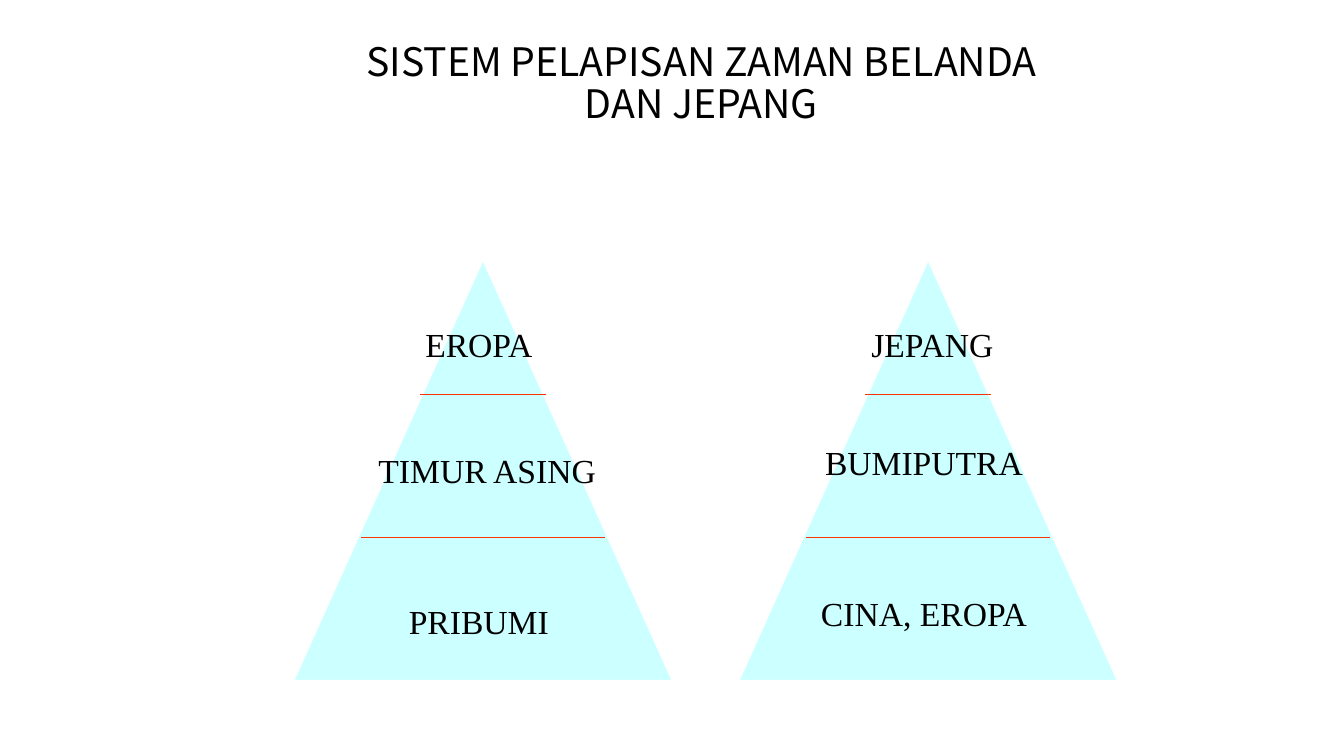
from dataclasses import dataclass

import pptx
import pptx.dml.color
import pptx.enum.shapes
import pptx.enum.text
import pptx.oxml
import pptx.oxml.ns
import pptx.util

Pt = pptx.util.Pt
RGB = pptx.dml.color.RGBColor
CENTER = pptx.enum.text.PP_ALIGN.CENTER


@dataclass(frozen=True)
class Theme:
    text: RGB = RGB(0x00, 0x00, 0x00)
    background: RGB = RGB(0xFF, 0xFF, 0xFF)
    pyramid: RGB = RGB(0xCC, 0xFF, 0xFF)
    divider: RGB = RGB(0xFF, 0x33, 0x00)
    title_font: str = "Noto Sans CJK KR"
    label_font: str = "Times New Roman"
    title_size: float = 28
    label_size: float = 24
    line_width: float = 0.75


@dataclass(frozen=True)
class Label:
    """A layer name, placed relative to the pyramid's top left corner."""
    text: str
    dx: float
    dy: float


@dataclass(frozen=True)
class Pyramid:
    left: float
    labels: tuple[Label, ...]


@dataclass(frozen=True)
class Divider:
    """A level line, centred on the pyramid."""
    dy: float
    width: float


THEME = Theme()
PYRAMID_TOP, PYRAMID_WIDTH, PYRAMID_HEIGHT = 186, 270, 300
LABEL_WIDTH, LABEL_HEIGHT = 192, 36
DIVIDERS = (Divider(96, 90), Divider(198, 174))
PYRAMIDS = (
    Pyramid(210, (Label("EROPA", 36, 42), Label("TIMUR ASING", 42, 132),
                  Label("PRIBUMI", 36, 240))),
    Pyramid(528, (Label("JEPANG", 42, 42), Label("BUMIPUTRA", 36, 126),
                  Label("CINA, EROPA", 36, 234))),
)


def write(tf: pptx.text.text.TextFrame, text: str, font: str, size: float) -> None:
    tf.word_wrap = True
    p = tf.paragraphs[0]
    p.alignment = CENTER
    p.space_before = Pt(0)
    r = p.add_run()
    r.text = text
    r.font.name = font
    r.font.size = Pt(size)
    r.font.color.rgb = THEME.text


def add_title(s: pptx.slide.Slide, text: str) -> None:
    sp = s.shapes.title
    sp.left, sp.top, sp.width, sp.height = Pt(252), Pt(24), Pt(498), Pt(73.5)
    tf = sp.text_frame
    tf.vertical_anchor = pptx.enum.text.MSO_ANCHOR.MIDDLE
    write(tf, text, THEME.title_font, THEME.title_size)
    tf.paragraphs[0].line_spacing = 0.9


def add_divider(shapes: pptx.shapes.shapetree.GroupShapes, left: float,
                divider: Divider) -> None:
    x = left + (PYRAMID_WIDTH - divider.width) / 2
    y = PYRAMID_TOP + divider.dy
    line = shapes.add_connector(pptx.enum.shapes.MSO_CONNECTOR.STRAIGHT,
                                Pt(x), Pt(y), Pt(x + divider.width), Pt(y))
    line.line.color.rgb = THEME.divider
    line.line.width = Pt(THEME.line_width)
    effects = pptx.oxml.parse_xml(f"<a:effectLst {pptx.oxml.ns.nsdecls('a')}/>")
    line._element.spPr.append(effects)


def add_label(shapes: pptx.shapes.shapetree.GroupShapes, left: float,
              label: Label) -> None:
    sp = shapes.add_textbox(Pt(left + label.dx), Pt(PYRAMID_TOP + label.dy),
                            Pt(LABEL_WIDTH), Pt(LABEL_HEIGHT))
    write(sp.text_frame, label.text, THEME.label_font, THEME.label_size)
    sp.text_frame.auto_size = pptx.enum.text.MSO_AUTO_SIZE.SHAPE_TO_FIT_TEXT


def add_pyramid(s: pptx.slide.Slide, pyramid: Pyramid) -> None:
    shapes = s.shapes.add_group_shape().shapes
    sp = shapes.add_shape(pptx.enum.shapes.MSO_SHAPE.ISOSCELES_TRIANGLE,
                          Pt(pyramid.left), Pt(PYRAMID_TOP),
                          Pt(PYRAMID_WIDTH), Pt(PYRAMID_HEIGHT))
    sp.shadow.inherit = False
    sp.fill.solid()
    sp.fill.fore_color.rgb = THEME.pyramid
    sp.line.color.rgb = THEME.background
    sp.line.width = Pt(THEME.line_width)
    for divider in DIVIDERS:
        add_divider(shapes, pyramid.left, divider)
    for label in pyramid.labels:
        add_label(shapes, pyramid.left, label)


def main() -> None:
    prs = pptx.Presentation()
    prs.slide_width, prs.slide_height = Pt(960), Pt(540)
    s = prs.slides.add_slide(prs.slide_layouts.get_by_name("Title Only"))
    s.background.fill.solid()
    s.background.fill.fore_color.rgb = THEME.background
    add_title(s, "SISTEM PELAPISAN ZAMAN BELANDA DAN JEPANG")
    for pyramid in PYRAMIDS:
        add_pyramid(s, pyramid)
    prs.save("out.pptx")


if __name__ == "__main__":
    main()
